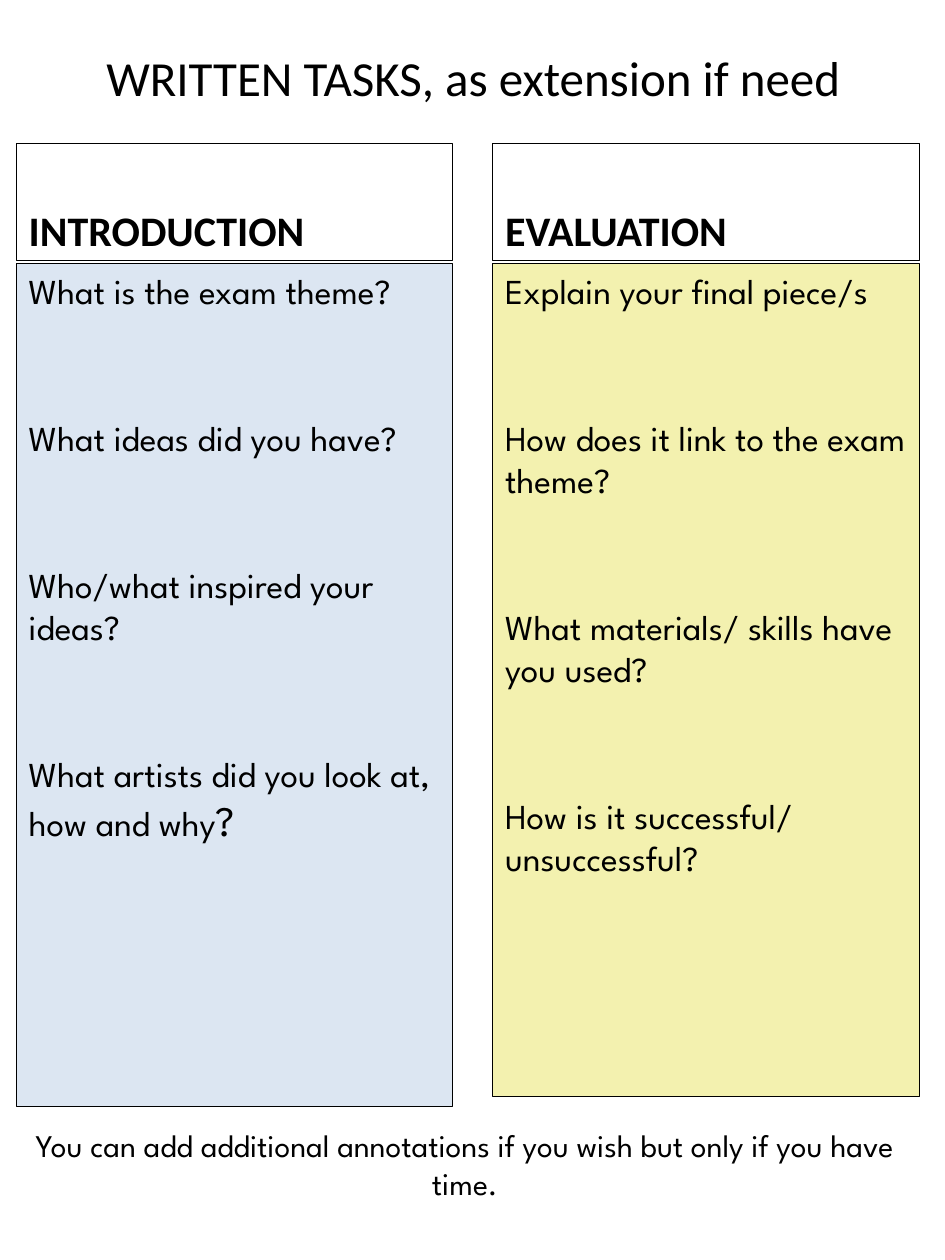
"""Build a portrait slide of written tasks in two question columns."""
from dataclasses import dataclass

from pptx import Presentation
from pptx.dml.color import RGBColor
from pptx.enum.shapes import MSO_SHAPE
from pptx.enum.text import MSO_ANCHOR, MSO_AUTO_SIZE, PP_ALIGN
from pptx.util import Inches, Pt


@dataclass(frozen=True)
class Theme:
    heading_font: str = "Calibri"
    body_font: str = "League Spartan"
    ink: str = "000000"
    title_size: int = 28
    heading_size: int = 24
    question_size: int = 20
    note_size: int = 18
    line_width: float = 0.75
    question_gap: int = 60


THEME = Theme()
TITLE = "WRITTEN TASKS, as extension if need"
NOTE = "You can add additional annotations if you wish but only if you have time."
COLUMNS = [
    {
        "heading": "INTRODUCTION", "left": 0.13, "width": 3.46,
        "height": 6.69, "fill": "DCE6F2",
        "questions": [
            ["What is the exam theme?"],
            ["What ideas did you have?"],
            ["Who/what inspired your ideas?"],
            ["What artists did you look at, how and why", "?"],
        ],
    },
    {
        "heading": "EVALUATION", "left": 3.91, "width": 3.39,
        "height": 6.61, "fill": "F3F1AF",
        "questions": [
            ["Explain your final piece/s"],
            ["How does it link to the exam theme?"],
            ["What materials/ skills have you used?"],
            ["How is it successful/ unsuccessful?"],
        ],
    },
]
HEADING_TOP, HEADING_HEIGHT, QUESTIONS_TOP = 1.14, 0.93, 2.09


def style(paragraph, font_name, size, alignment, bold=False):
    paragraph.alignment = alignment
    font = paragraph.font
    font.name, font.size, font.bold = font_name, Pt(size), bold
    font.color.rgb = RGBColor.from_string(THEME.ink)


def add_box(slide, left, top, width, height, anchor, fill=None):
    shape = slide.shapes.add_shape(
        MSO_SHAPE.RECTANGLE, Inches(left), Inches(top), Inches(width), Inches(height))
    shape.shadow.inherit = False
    if fill:
        shape.fill.solid()
        shape.fill.fore_color.rgb = RGBColor.from_string(fill)
    else:
        shape.fill.background()
    shape.line.color.rgb = RGBColor.from_string(THEME.ink)
    shape.line.width = Pt(THEME.line_width)
    shape.text_frame.word_wrap = True
    shape.text_frame.vertical_anchor = anchor
    return shape.text_frame


def add_column(slide, column):
    left, width = column["left"], column["width"]
    heading = add_box(slide, left, HEADING_TOP, width, HEADING_HEIGHT, MSO_ANCHOR.BOTTOM)
    heading.text = column["heading"]
    style(heading.paragraphs[0], THEME.heading_font, THEME.heading_size, PP_ALIGN.LEFT, True)

    frame = add_box(slide, left, QUESTIONS_TOP, width, column["height"],
                    MSO_ANCHOR.TOP, column["fill"])
    for index, (question, *enlarged) in enumerate(column["questions"]):
        paragraph = frame.add_paragraph() if index else frame.paragraphs[0]
        if index:
            paragraph.space_before = Pt(THEME.question_gap)
        style(paragraph, THEME.body_font, THEME.question_size, PP_ALIGN.LEFT)
        paragraph.add_run().text = question
        for text in enlarged:
            run = paragraph.add_run()
            run.text = text
            run.font.size = Pt(THEME.heading_size)


def main():
    presentation = Presentation()
    presentation.slide_width, presentation.slide_height = Inches(7.5), Inches(10)
    slide = presentation.slides.add_slide(presentation.slide_layouts[5])

    title = slide.shapes.title
    title.left, title.top = Inches(0.38), Inches(0)
    title.width, title.height = Inches(6.75), Inches(1.22)
    title.text_frame.text = TITLE
    title.text_frame.auto_size = MSO_AUTO_SIZE.NONE
    title.text_frame.vertical_anchor = MSO_ANCHOR.MIDDLE
    style(title.text_frame.paragraphs[0], THEME.heading_font, THEME.title_size, PP_ALIGN.CENTER)

    for column in COLUMNS:
        add_column(slide, column)

    note = slide.shapes.add_textbox(Inches(0.01), Inches(8.89), Inches(7.36), Inches(0.71))
    note.text_frame.word_wrap = True
    note.text_frame.text = NOTE
    style(note.text_frame.paragraphs[0], THEME.body_font, THEME.note_size, PP_ALIGN.CENTER)

    presentation.save("out.pptx")


if __name__ == "__main__":
    main()
